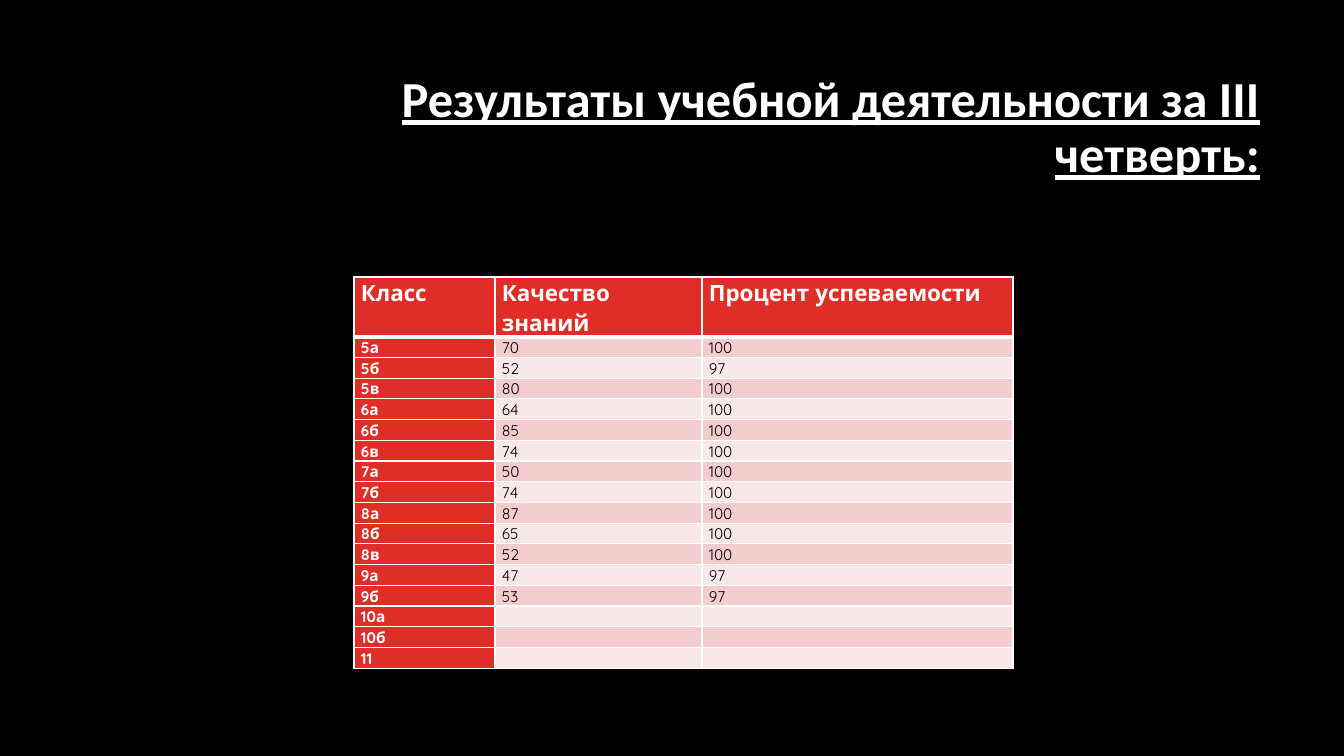
"""Build a slide with the school results of the third quarter."""
from lxml.etree import SubElement as Sub
from pptx import Presentation
from pptx.dml.color import RGBColor
from pptx.enum.text import MSO_ANCHOR as Anchor, PP_ALIGN as Align
from pptx.oxml.ns import qn
from pptx.util import Pt

SCALE = 12192000 / 1344
BLACK = RGBColor(0x00, 0x00, 0x00)
WHITE = RGBColor(0xFF, 0xFF, 0xFF)
RED = RGBColor(0xDF, 0x2E, 0x28)
ROSE = RGBColor(0xF3, 0xCD, 0xCD)
PALE = RGBColor(0xF9, 0xE8, 0xE8)

TITLE = "Результаты учебной деятельности за III четверть:"
HEADS = ("Класс", "Качество знаний", "Процент успеваемости")
MARKS = (
    ("5а", "70", "100"), ("5б", "52", "97"), ("5в", "80", "100"),
    ("6а", "64", "100"), ("6б", "85", "100"), ("6в", "74", "100"),
    ("7а", "50", "100"), ("7б", "74", "100"),
    ("8а", "87", "100"), ("8б", "65", "100"), ("8в", "52", "100"),
    ("9а", "47", "97"), ("9б", "53", "97"),
    ("10а", "", ""), ("10б", "", ""), ("11", "", ""),
)
WIDTHS = (141, 207, 311)
HEAD, ROW = 54, 20


def px(count):
    """Turn whole pixels into EMU."""
    return round(count * SCALE)


def write(frame, text, *, size, face, color=WHITE, bold=True, under=False,
          align=Align.LEFT, space=1.07):
    """Write one formatted paragraph into a text frame."""
    para = frame.paragraphs[0]
    para.alignment, para.line_spacing = align, space
    if not text:
        Sub(para._p, qn("a:endParaRPr"), sz=str(size * 100))
        return
    run = para.add_run()
    run.text = text
    font = run.font
    font.size, font.name, font.bold, font.underline = Pt(size), face, bold, under
    font.color.rgb = color


def edge(cell, top, base):
    """Draw white borders with the given top and bottom widths in points."""
    props = cell._tc.get_or_add_tcPr()
    for side, width in zip("LRTB", (1, 1, top, base)):
        line = Sub(props, qn(f"a:ln{side}"), w=str(Pt(width)))
        fill = Sub(line, qn("a:solidFill"))
        Sub(fill, qn("a:srgbClr"), val=str(WHITE))


def head(slide, left, top, width, height):
    """Place the title in its box, with its text raised by a deep lower inset."""
    title = slide.shapes.title
    title.left, title.top = px(left), px(top)
    title.width, title.height = px(width), px(height)
    frame = title.text_frame
    frame.word_wrap = True
    frame.vertical_anchor = Anchor.MIDDLE
    frame.margin_left = frame.margin_right = px(10)
    frame.margin_top, frame.margin_bottom = px(5), px(60)
    write(frame, TITLE, size=36, face="Calibri", under=True,
          align=Align.RIGHT, space=0.9)


def grid(slide, left, top):
    """Place the table of marks with its corner at the given point."""
    rows = (HEADS, *MARKS)
    table = slide.shapes.add_table(
        len(rows), len(HEADS), px(left), px(top),
        px(sum(WIDTHS)), px(HEAD + ROW * len(MARKS))).table
    table.first_col = True
    for col, width in zip(table.columns, WIDTHS):
        col.width = px(width)
    for i, row in enumerate(rows):
        table.rows[i].height = px(ROW if i else HEAD)
        for j, text in enumerate(row):
            cell = table.cell(i, j)
            label = i == 0 or j == 0
            cell.margin_left = cell.margin_right = px(7)
            cell.margin_top = cell.margin_bottom = 0
            edge(cell, 3 if i == 1 else 1, 1 if i else 3)
            cell.fill.solid()
            cell.fill.fore_color.rgb = RED if label else ROSE if i % 2 else PALE
            write(cell.text_frame, text, size=11 if i else 16,
                  face="Quicksand", color=WHITE if label else BLACK, bold=label)


def main():
    """Build and save the slide."""
    deck = Presentation()
    deck.slide_width, deck.slide_height = px(1344), px(756)
    slide = deck.slides.add_slide(deck.slide_layouts[5])
    slide.background.fill.solid()
    slide.background.fill.fore_color.rgb = BLACK
    head(slide, 320, 85, 950, 142)
    grid(slide, 354, 277)
    deck.save("out.pptx")


if __name__ == "__main__":
    main()
